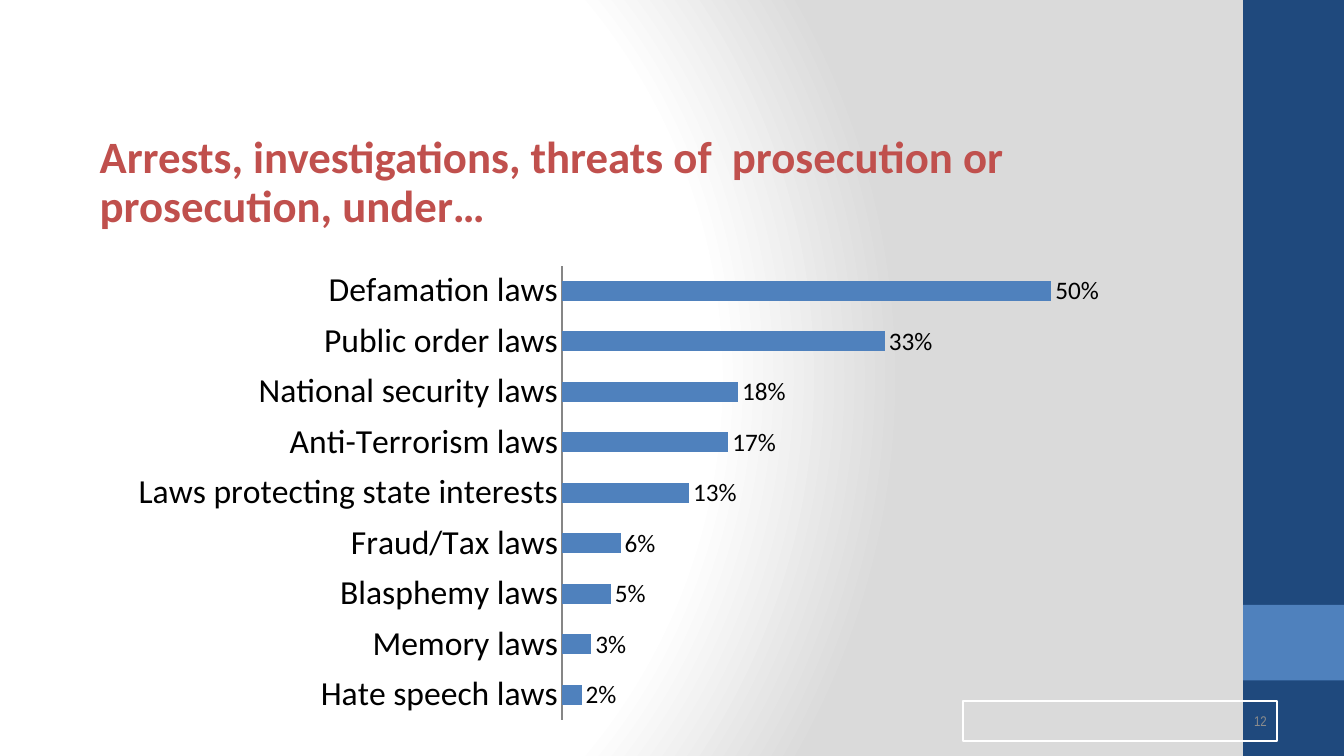
from dataclasses import dataclass

from pptx import Presentation
from pptx.chart.data import CategoryChartData
from pptx.dml.color import RGBColor
from pptx.enum.chart import XL_CHART_TYPE as CT, XL_LABEL_POSITION as LP, XL_TICK_MARK as TM
from pptx.enum.shapes import MSO_SHAPE as SHAPE
from pptx.enum.text import MSO_ANCHOR as ANCHOR, MSO_AUTO_SIZE as AUTO, PP_ALIGN as ALIGN
from pptx.oxml import parse_xml
from pptx.oxml.ns import nsdecls
from pptx.slide import Slide
from pptx.util import Pt

COLORS = {
    "white": "FFFFFF", "grey": "DADADA", "navy": "1F497D", "blue": "4F81BD",
    "red": "C0504D", "number": "8C8C8C", "axis": "868686", "black": "000000",
}
TITLE = "Arrests, investigations, threats of  prosecution or prosecution, under…"
LAWS = {
    "Hate speech laws": 0.02,
    "Memory laws": 0.03,
    "Blasphemy laws": 0.05,
    "Fraud/Tax laws": 0.06,
    "Laws protecting state interests": 0.13,
    "Anti-Terrorism laws": 0.17,
    "National security laws": 0.18,
    "Public order laws": 0.33,
    "Defamation laws": 0.5,
}


@dataclass
class Box:
    left: float
    top: float
    width: float
    height: float
    fill: str = ""
    line: str = ""
    text: str = ""


BOXES = [
    Box(888, 0, 72, 540, fill="navy"),
    Box(888, 432, 72, 54, fill="blue"),
    Box(688, 500.5, 224, 28.5, line="white", text="12"),
]


def rgb(name: str) -> RGBColor:
    return RGBColor.from_string(COLORS[name])


def set_background(s: Slide) -> None:
    """Fill the slide with a circular gradient, white inside and grey outside."""
    stops = "".join(
        f'<a:gs pos="{pos * 1000}"><a:srgbClr val="{COLORS[name]}"/></a:gs>'
        for pos, name in ((0, "white"), (75, "white"), (100, "grey")))
    s.element.cSld.insert(0, parse_xml(
        f'<p:bg {nsdecls("p", "a")}><p:bgPr><a:gradFill rotWithShape="1">'
        f'<a:gsLst>{stops}</a:gsLst><a:path path="circle">'
        '<a:fillToRect l="20000" t="50000" r="100000" b="50000"/></a:path>'
        '</a:gradFill><a:effectLst/></p:bgPr></p:bg>'))


def add_box(s: Slide, box: Box) -> None:
    sp = s.shapes.add_shape(SHAPE.RECTANGLE, Pt(box.left), Pt(box.top),
                            Pt(box.width), Pt(box.height))
    sp.shadow.inherit = False
    if box.fill:
        sp.fill.solid()
        sp.fill.fore_color.rgb = rgb(box.fill)
    else:
        sp.fill.background()
    if box.line:
        sp.line.color.rgb = rgb(box.line)
        sp.line.width = Pt(1.5)
    else:
        sp.line.fill.background()
    if box.text:
        tf = sp.text_frame
        tf.text = box.text
        tf.vertical_anchor = ANCHOR.MIDDLE
        p = tf.paragraphs[0]
        p.alignment = ALIGN.RIGHT
        p.font.size, p.font.name = Pt(10), "Arial Narrow"
        p.font.color.rgb = rgb("number")


def set_title(s: Slide) -> None:
    sp = s.shapes.title
    sp.left, sp.top, sp.width, sp.height = Pt(64), Pt(93), Pt(788), Pt(90)
    tf = sp.text_frame
    tf.text = TITLE
    tf.word_wrap, tf.auto_size, tf.vertical_anchor = True, AUTO.NONE, ANCHOR.TOP
    p = tf.paragraphs[0]
    p.alignment, p.line_spacing = ALIGN.LEFT, 0.9
    p.font.size, p.font.bold, p.font.name = Pt(32), True, "Calibri"
    p.font.color.rgb = rgb("red")


def add_law_chart(s: Slide) -> None:
    data = CategoryChartData(number_format="0%")
    data.categories = list(LAWS)
    data.add_series("Series 1", list(LAWS.values()))
    chart = s.shapes.add_chart(CT.BAR_CLUSTERED, Pt(84), Pt(183),
                               Pt(752), Pt(338), data).chart
    chart.has_legend = chart.has_title = False
    chart.font.size, chart.font.name = Pt(18), "Calibri"
    chart.font.color.rgb = rgb("black")

    laws = chart.category_axis
    laws.major_tick_mark = laws.minor_tick_mark = TM.NONE
    laws.has_major_gridlines = False
    laws.format.line.color.rgb = rgb("axis")
    laws.tick_labels.font.size = Pt(24)

    share = chart.value_axis
    share.visible = share.has_major_gridlines = False
    share.minimum_scale, share.maximum_scale = 0, 0.6

    plot = chart.plots[0]
    plot.gap_width, plot.overlap, plot.vary_by_categories = 150, -25, False
    fill = plot.series[0].format.fill
    fill.solid()
    fill.fore_color.rgb = rgb("blue")
    plot.has_data_labels = True
    labels = plot.data_labels
    labels.show_value, labels.position = True, LP.OUTSIDE_END
    labels.number_format, labels.number_format_is_linked = "0%", False


def main() -> None:
    prs = Presentation()
    prs.slide_width, prs.slide_height = Pt(960), Pt(540)
    s = prs.slides.add_slide(prs.slide_layouts[5])
    set_background(s)
    for box in BOXES:
        add_box(s, box)
    set_title(s)
    add_law_chart(s)
    prs.save("out.pptx")


if __name__ == "__main__":
    main()
